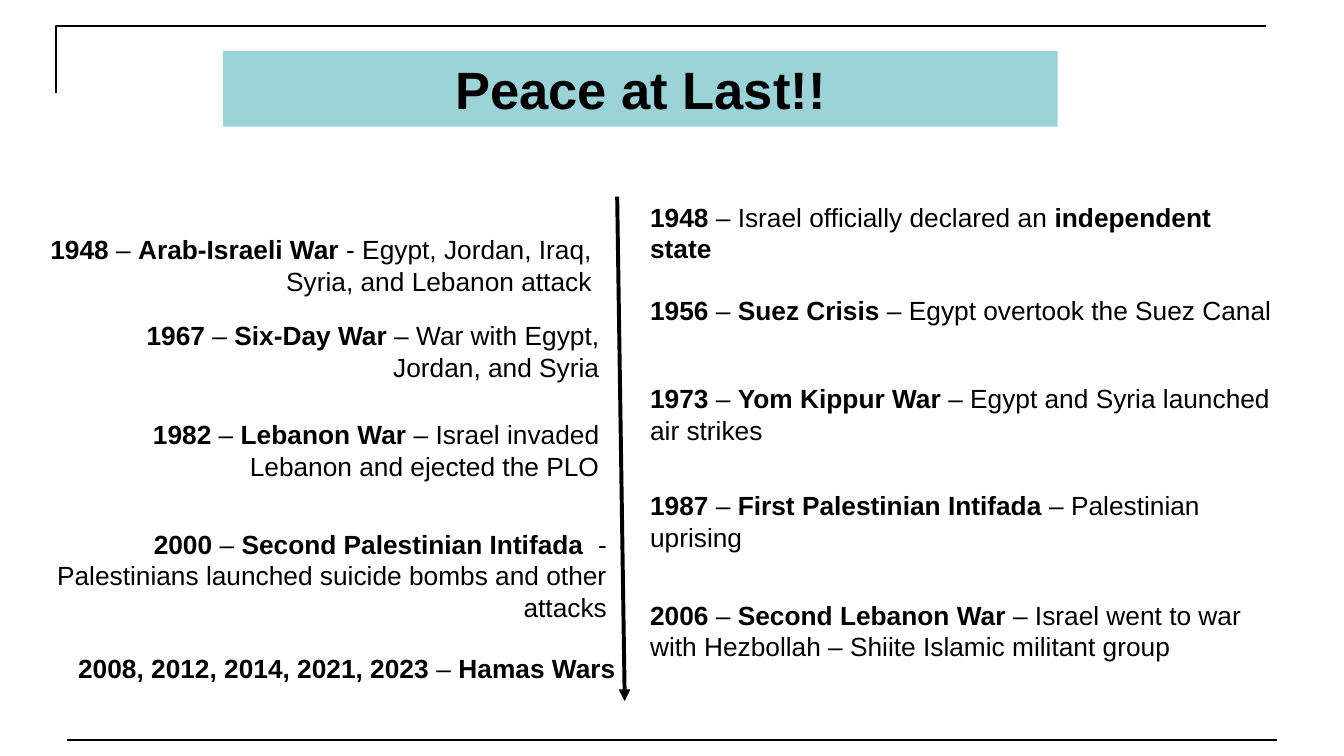
from pptx import Presentation
from pptx.dml.color import RGBColor
from pptx.enum.shapes import MSO_CONNECTOR
from pptx.enum.text import MSO_ANCHOR, PP_ALIGN
from pptx.oxml.ns import qn
from pptx.util import Inches, Pt
from lxml.etree import SubElement

FONT, INK, BAND = "Arial", "000000", "9BD3D9"
TITLE = "Peace at Last!!"

# Runs alternate bold and plain, starting bold
# Left of the arrow: left, top, width, lines, runs
WARS = [
    (0.29, 2.42, 6.07, 2, ["1948", " – ", "Arab-Israeli War ",
                           "- Egypt, Jordan, Iraq, Syria, and Lebanon attack"]),
    (0.46, 3.33, 5.98, 2, ["1967", " – ", "Six-Day War ",
                           "– War with Egypt, Jordan, and Syria"]),
    (0.46, 4.38, 5.98, 2, ["1982", " –", " Lebanon War ",
                           "– Israel invaded Lebanon and ejected the PLO"]),
    (0.19, 5.54, 6.33, 3, ["2000", " –", " Second Palestinian Intifada ",
                           " - Palestinians launched suicide bombs and other attacks"]),
    (0.28, 6.85, 6.33, 1, ["2008, 2012, 2014, 2021, 2023", " –", " Hamas Wars"]),
]

# Right of the arrow: top, lines, runs
EVENTS = [
    (2.08, 2, ["1948", " – Israel officially declared an ", "independent state"]),
    (3.06, 1, ["1956", " – ", "Suez Crisis ", "– Egypt overtook the Suez Canal"]),
    (4.00, 2, ["1973", " – ", "Yom Kippur War",
               " – Egypt and Syria launched air strikes"]),
    (5.13, 2, ["1987", " – ", "First Palestinian Intifada", " – Palestinian uprising"]),
    (6.29, 2, ["2006", " – ", "Second Lebanon War",
               " – Israel went to war with Hezbollah – Shiite Islamic militant group"]),
]
EVENT_LEFT, EVENT_WIDTH = 6.78, 6.83


def color(code):
    return RGBColor.from_string(code)


def style(para, size, align):
    para.alignment = align
    para.font.name, para.font.size = FONT, Pt(size)
    para.font.color.rgb = color(INK)


def add_line(slide, start, end, width):
    line = slide.shapes.add_connector(
        MSO_CONNECTOR.STRAIGHT, *[Inches(n) for n in start + end])
    line.line.color.rgb = color(INK)
    line.line.width = Pt(width)
    SubElement(line._element.spPr, qn("a:effectLst"))
    return line


def add_entry(slide, left, top, width, lines, runs, align):
    height = 0.1 + lines / 3
    box = slide.shapes.add_textbox(*[Inches(n) for n in (left, top, width, height)])
    box.text_frame.word_wrap = True
    para = box.text_frame.paragraphs[0]
    style(para, 20, align)
    for i, text in enumerate(runs):
        run = para.add_run()
        run.text = text
        run.font.bold = i % 2 == 0


deck = Presentation()
deck.slide_width, deck.slide_height = Inches(14.22), Inches(8)
slide = deck.slides.add_slide(deck.slide_layouts[5])

# Frame: bottom rule and top-left corner
add_line(slide, (0.71, 7.83), (13.51, 7.83), 1.5)
pen = slide.shapes.build_freeform(Inches(0.59), Inches(0.98))
pen.add_line_segments([(Inches(0.59), Inches(0.27)), (Inches(13.39), Inches(0.27))],
                      close=False)
corner = pen.convert_to_shape()
corner.shadow.inherit = False
corner.fill.background()
corner.line.color.rgb = color(INK)
corner.line.width = Pt(1.5)

# Title band
title = slide.shapes.title
title.left, title.top = Inches(2.36), Inches(0.54)
title.width, title.height = Inches(8.83), Inches(0.8)
title.fill.solid()
title.fill.fore_color.rgb = color(BAND)
title.text_frame.text = TITLE
title.text_frame.vertical_anchor = MSO_ANCHOR.MIDDLE
head = title.text_frame.paragraphs[0]
style(head, 40, PP_ALIGN.CENTER)
head.font.bold = True

# Time arrow
arrow = add_line(slide, (6.53, 2.08), (6.61, 7.42), 3)
SubElement(arrow.line._get_or_add_ln(), qn("a:tailEnd"), type="triangle")

# Entries on both sides
for left, top, width, lines, runs in WARS:
    add_entry(slide, left, top, width, lines, runs, PP_ALIGN.RIGHT)
for top, lines, runs in EVENTS:
    add_entry(slide, EVENT_LEFT, top, EVENT_WIDTH, lines, runs, PP_ALIGN.LEFT)

deck.save("out.pptx")
